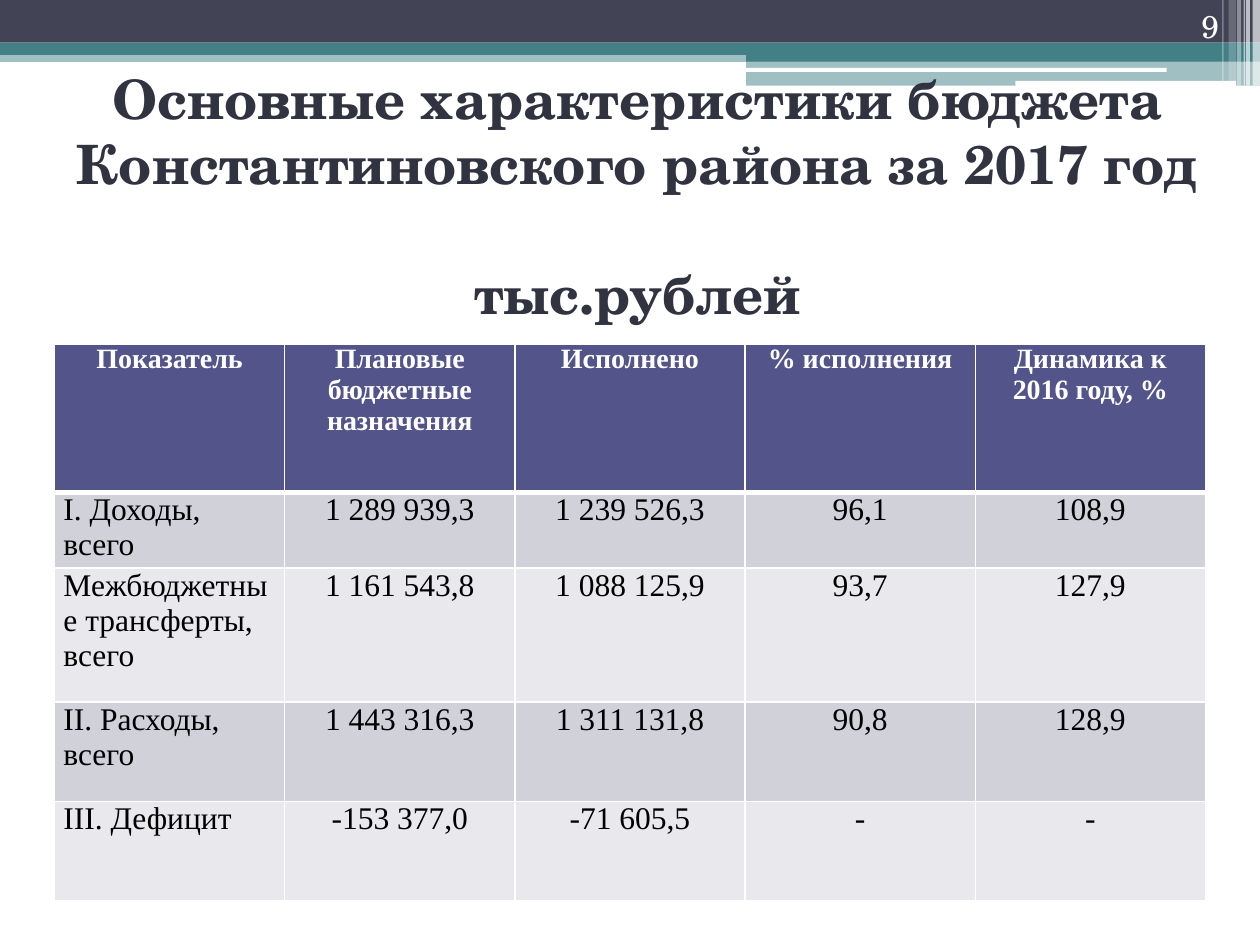
from lxml.etree import SubElement
from pptx import Presentation
from pptx.dml.color import RGBColor
from pptx.enum.shapes import MSO_SHAPE as SHAPE
from pptx.enum.text import MSO_ANCHOR as ANCHOR, PP_ALIGN as ALIGN
from pptx.oxml import parse_xml
from pptx.oxml.ns import nsdecls, qn
from pptx.util import Cm, Pt

WHITE = RGBColor(0xFF, 0xFF, 0xFF)
BLACK = RGBColor(0x00, 0x00, 0x00)
SLATE = RGBColor(0x42, 0x44, 0x56)
TEAL = RGBColor(0x43, 0x80, 0x86)
INK = RGBColor(0x32, 0x33, 0x41)
VIOLET = RGBColor(0x53, 0x54, 0x8A)
BAND_DARK = RGBColor(0xD1, 0xD1, 0xDA)
BAND_LIGHT = RGBColor(0xE9, 0xE9, 0xED)

HEADING_FONT = "TeX Gyre Schola"
TABLE_FONT = "Times New Roman"

BANDS = [
    (0, 1.02, 25.4, 0.23, TEAL, 50),
    (0, 0, 25.4, 0.86, SLATE, 100),
    (0, 0.86, 25.4, 0.25, TEAL, 100),
    (15.04, 0.99, 10.36, 0.25, TEAL, 100),
    (15.04, 1.23, 10.36, 0.5, TEAL, 50),
]
WHITE_LINES = [(15.01, 1.37, 8.51, 0.08), (20.47, 1.63, 4.45, 0.1)]
STRIPES = [
    (25.25, 0.15, 1.73, 65),
    (25.12, 0.08, 1.73, 65),
    (25.07, 0.03, 1.73, 60),
    (24.94, 0.08, 1.73, 40),
    (24.77, 0.15, 1.63, 20),
    (24.64, 0.03, 1.63, 30),
]
TITLE = ["Основные характеристики бюджета", "Константиновского района за 2017 год", "тыс.рублей"]
ROW_HEIGHTS = [3, 1, 2.7, 2, 2]
COLUMN_WIDTH = 4.64
ROWS = [
    ["Показатель", "Плановые бюджетные назначения", "Исполнено", "% исполнения", "Динамика к 2016 году, %"],
    ["I. Доходы, всего", "1 289 939,3", "1 239 526,3", "96,1", "108,9"],
    ["Межбюджетные трансферты, всего", "1 161 543,8", "1 088 125,9", "93,7", "127,9"],
    ["II. Расходы, всего", "1 443 316,3", "1 311 131,8", "90,8", "128,9"],
    ["III. Дефицит", "-153 377,0", "-71 605,5", "-", "-"],
]


def write(p, text, font, size, color, bold=False, align=ALIGN.CENTER):
    """Put formatted text into a paragraph."""
    p.alignment = align
    r = p.add_run()
    r.text = text
    r.font.name = font
    r.font.size = Pt(size)
    r.font.bold = bold
    r.font.color.rgb = color


def add_bar(s, left, top, width, height, color, opacity=100, kind=SHAPE.RECTANGLE):
    """Add a borderless bar, optionally translucent."""
    sp = s.shapes.add_shape(kind, Cm(left), Cm(top), Cm(width), Cm(height))
    sp.shadow.inherit = False
    sp.line.fill.background()
    sp.fill.solid()
    sp.fill.fore_color.rgb = color
    if opacity < 100:
        clr = sp.fill._xPr.find(qn("a:solidFill"))[0]
        SubElement(clr, qn("a:alpha"), val=str(opacity * 1000))


def add_text(s, left, top, width, height, anchor):
    """Add a wrapping text box and return its text frame."""
    tf = s.shapes.add_textbox(Cm(left), Cm(top), Cm(width), Cm(height)).text_frame
    tf.word_wrap = True
    tf.vertical_anchor = anchor
    return tf


def set_borders(cell, top=1, bottom=1):
    """Draw white cell borders with the given widths in points."""
    widths = {"lnL": 1, "lnR": 1, "lnT": top, "lnB": bottom}
    tc_pr = cell._tc.get_or_add_tcPr()
    for i, (side, width) in enumerate(widths.items()):
        tc_pr.insert(i, parse_xml(
            f'<a:{side} {nsdecls("a")} w="{Pt(width)}"><a:solidFill>'
            f'<a:srgbClr val="{WHITE}"/></a:solidFill></a:{side}>'))


def add_header_bands(s):
    """Draw the decorative strips along the top edge."""
    for band in BANDS:
        add_bar(s, *band)
    for line in WHITE_LINES:
        add_bar(s, *line, WHITE, kind=SHAPE.ROUNDED_RECTANGLE)
    for left, width, height, opacity in STRIPES:
        add_bar(s, left, 0, width, height, WHITE, opacity)


def add_title(s):
    """Add the heading with the unit of measure set apart below."""
    tf = add_text(s, 0.71, 2.51, 24.28, 2.84, ANCHOR.MIDDLE)
    for i, line in enumerate(TITLE):
        p = tf.paragraphs[0] if i == 0 else tf.add_paragraph()
        write(p, line, HEADING_FONT, 31, INK, bold=True)
    p.space_before = Pt(37)


def add_budget_table(s):
    """Add the table of budget figures."""
    n_rows, n_cols = len(ROWS), len(ROWS[0])
    table = s.shapes.add_table(n_rows, n_cols, Cm(1.1), Cm(6.93),
                               Cm(COLUMN_WIDTH * n_cols), Cm(sum(ROW_HEIGHTS))).table
    for column in table.columns:
        column.width = Cm(COLUMN_WIDTH)
    for i, (values, height) in enumerate(zip(ROWS, ROW_HEIGHTS)):
        table.rows[i].height = Cm(height)
        header = i == 0
        band = VIOLET if header else BAND_DARK if i % 2 else BAND_LIGHT
        for j, value in enumerate(values):
            cell = table.cell(i, j)
            cell.margin_left = cell.margin_right = Cm(0.18)
            cell.margin_top = cell.margin_bottom = 0
            cell.fill.solid()
            cell.fill.fore_color.rgb = band
            set_borders(cell, top=3 if i == 1 else 1, bottom=3 if header else 1)
            write(cell.text_frame.paragraphs[0], value, TABLE_FONT,
                  16 if header else 18, WHITE if header else BLACK, bold=header,
                  align=ALIGN.CENTER if header or j else ALIGN.LEFT)


def main():
    """Build the slide and save it."""
    prs = Presentation()
    prs.slide_width, prs.slide_height = Cm(25.4), Cm(19.05)
    s = prs.slides.add_slide(prs.slide_layouts[6])
    add_header_bands(s)
    add_title(s)
    add_budget_table(s)
    tf = add_text(s, 22.71, 0, 2.11, 1.02, ANCHOR.BOTTOM)
    write(tf.paragraphs[0], "9", HEADING_FONT, 18, WHITE, align=ALIGN.RIGHT)
    prs.save("out.pptx")


if __name__ == "__main__":
    main()
